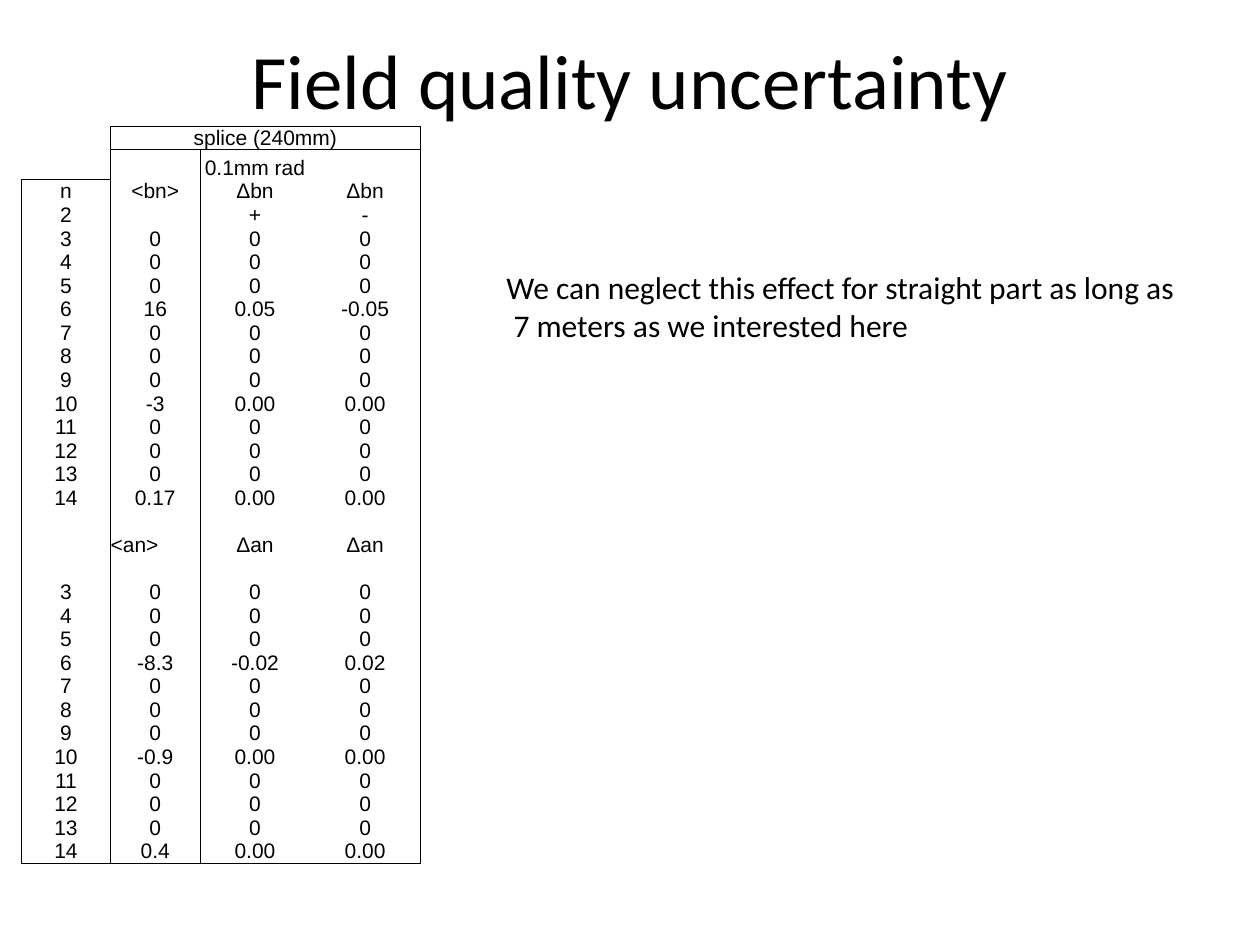
"""Build the field quality uncertainty slide with its multipole table."""
from lxml import etree
from pptx import Presentation
from pptx import util as u
from pptx.dml.color import RGBColor
from pptx.enum import text
from pptx.oxml import ns

BLACK = RGBColor(0, 0, 0)


def add_run(paragraph, words, font_name, size):
    run = paragraph.add_run()
    run.text = words
    run.font.name = font_name
    run.font.size = u.Pt(size)
    run.font.color.rgb = BLACK


def set_borders(cell, visible_sides):
    properties = cell._tc.get_or_add_tcPr()
    for side in "LRTB":
        line = etree.SubElement(properties, ns.qn(f"a:ln{side}"), w=str(u.Pt(0.5)))
        if side in visible_sides:
            fill = etree.SubElement(line, ns.qn("a:solidFill"))
            etree.SubElement(fill, ns.qn("a:srgbClr"), val=str(BLACK))
        else:
            etree.SubElement(line, ns.qn("a:noFill"))


presentation = Presentation()
presentation.slide_width = u.Cm(25.4)
presentation.slide_height = u.Cm(19.05)
slide = presentation.slides.add_slide(presentation.slide_layouts[5])

title = slide.shapes.title
title.left, title.top = u.Cm(1.27), u.Cm(0)
title.width, title.height = u.Cm(22.86), u.Cm(3.18)
title.text_frame.vertical_anchor = text.MSO_ANCHOR.MIDDLE
title.text_frame.paragraphs[0].alignment = text.PP_ALIGN.CENTER
add_run(title.text_frame.paragraphs[0], "Field quality uncertainty", "Calibri", 44)

normal_values = {6: ("16", "0.05", "-0.05"), 10: ("-3", "0.00", "0.00"), 14: ("0.17", "0.00", "0.00")}
skew_values = {6: ("-8.3", "-0.02", "0.02"), 10: ("-0.9", "0.00", "0.00"), 14: ("0.4", "0.00", "0.00")}
normal_rows, skew_rows = [
    [(str(order), *values.get(order, ("0", "0", "0"))) for order in range(3, 15)]
    for values in (normal_values, skew_values)
]
blank_row = ("", "", "", "")
rows = [
    ("", "splice (240mm)", "", ""),
    ("", "", "0.1mm rad", ""),
    ("n", "<bn>", "Δbn", "Δbn"),
    ("2", "", "+", "-"),
    *normal_rows,
    blank_row,
    ("", "<an>", "Δan", "Δan"),
    blank_row,
    *skew_rows,
]

frame = slide.shapes.add_table(len(rows), 4, u.Cm(0.43), u.Cm(2.54), u.Cm(8.05), u.Cm(15.85))
table = frame.table
table.first_row = table.horz_banding = False
for column, width in zip(table.columns, (1.8, 1.8, 2.22, 2.22)):
    column.width = u.Cm(width)
for row in table.rows:
    row.height = u.Cm(0.41)
table.rows[1].height = u.Cm(0.61)
frame.height = u.Cm(15.85)
table.cell(0, 1).merge(table.cell(0, 3))

column_sides = ("LR", "LR", "L", "R")
for row_index, values in enumerate(rows):
    for column_index, words in enumerate(values):
        cell = table.cell(row_index, column_index)
        sides = column_sides[column_index]
        if column_index == 0 and row_index < 2:
            sides = "R" if row_index == 0 else "RB"
        elif row_index == 0:
            sides = "LRTB"
        elif row_index == (2 if column_index == 0 else 1):
            sides += "T"
        if row_index == len(rows) - 1:
            sides += "B"
        set_borders(cell, sides)
        cell.fill.background()
        cell.margin_left = cell.margin_right = cell.margin_top = cell.margin_bottom = u.Cm(0)
        cell.vertical_anchor = text.MSO_ANCHOR.BOTTOM
        paragraph = cell.text_frame.paragraphs[0]
        paragraph.alignment = text.PP_ALIGN.LEFT if words == "<an>" else text.PP_ALIGN.CENTER
        if words:
            add_run(paragraph, words, "Arial", 12)
        else:
            ending = etree.SubElement(paragraph._p, ns.qn("a:endParaRPr"), sz="1200")
            etree.SubElement(ending, ns.qn("a:latin"), typeface="Arial")

note = slide.shapes.add_textbox(u.Cm(9.96), u.Cm(5.28), u.Cm(14.15), u.Cm(1.8))
note.text_frame.word_wrap = False
note.text_frame.auto_size = text.MSO_AUTO_SIZE.SHAPE_TO_FIT_TEXT
add_run(note.text_frame.paragraphs[0], "We can neglect this effect for straight part as long as", "Calibri", 18)
add_run(note.text_frame.add_paragraph(), " 7 meters as we interested here", "Calibri", 18)

presentation.save("out.pptx")
